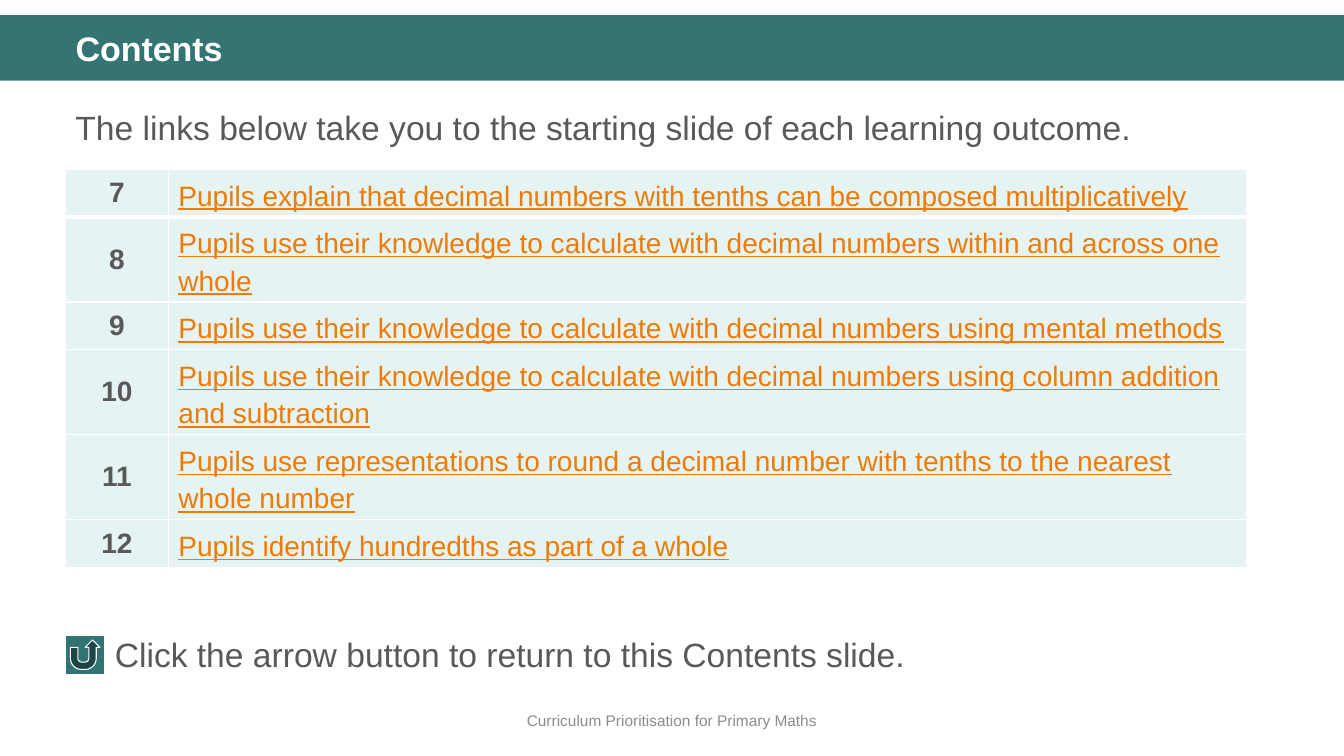
from dataclasses import dataclass

from lxml import etree
from pptx import Presentation
from pptx.dml.color import RGBColor
from pptx.enum.shapes import MSO_SHAPE
from pptx.enum.text import MSO_ANCHOR, MSO_AUTO_SIZE, PP_ALIGN
from pptx.oxml.ns import qn
from pptx.util import Inches, Pt

RECTANGLE = MSO_SHAPE.RECTANGLE
RETURN_BUTTON = MSO_SHAPE.ACTION_BUTTON_RETURN
TOP, MIDDLE = MSO_ANCHOR.TOP, MSO_ANCHOR.MIDDLE
LEFT, CENTER = PP_ALIGN.LEFT, PP_ALIGN.CENTER
NO_AUTOFIT = MSO_AUTO_SIZE.NONE
TITLE_ONLY = 5


@dataclass(frozen=True)
class Theme:
    font: str = "Arial"
    banner: str = "347574"
    button: str = "327473"
    white: str = "FFFFFF"
    body: str = "595959"
    footer: str = "8C8C8C"
    link: str = "EE7B08"
    cell: str = "E5F3F2"
    title_size: float = 24.3
    body_size: float = 24
    table_size: float = 20
    footer_size: float = 11


OUTCOMES = [
    ("7", "Pupils explain that decimal numbers with tenths can be composed multiplicatively", 1),
    ("8", "Pupils use their knowledge to calculate with decimal numbers within and across one whole", 2),
    ("9", "Pupils use their knowledge to calculate with decimal numbers using mental methods", 1),
    ("10", "Pupils use their knowledge to calculate with decimal numbers using column addition and subtraction", 2),
    ("11", "Pupils use representations to round a decimal number with tenths to the nearest whole number", 2),
    ("12", "Pupils identify hundredths as part of a whole", 1),
]
COLUMN_WIDTHS = (1.02, 10.69)
ROW_HEIGHTS = {1: 0.47, 2: 0.84}


class SlideBuilder:
    def __init__(self, slide, theme):
        self.slide = slide
        self.theme = theme

    def add_words(self, frame, text, size, color, bold=False, underline=False, **paragraph_format):
        paragraph = frame.paragraphs[0]
        for name, value in paragraph_format.items():
            setattr(paragraph, name, value)
        run = paragraph.add_run()
        run.text = text
        font_format = {
            "name": self.theme.font,
            "size": Pt(size),
            "bold": bold,
            "underline": underline,
        }
        for name, value in font_format.items():
            setattr(run.font, name, value)
        run.font.color.rgb = RGBColor.from_string(color)

    def prepare(self, frame, anchor):
        frame_format = {
            "word_wrap": True,
            "auto_size": NO_AUTOFIT,
            "vertical_anchor": anchor,
        }
        for name, value in frame_format.items():
            setattr(frame, name, value)

    def shape(self, kind, box, fill, line=None):
        shape = self.slide.shapes.add_shape(kind, *map(Inches, box))
        shape.shadow.inherit = False
        shape.fill.solid()
        shape.fill.fore_color.rgb = RGBColor.from_string(fill)
        if line:
            shape.line.color.rgb = RGBColor.from_string(line)
            shape.line.width = Pt(0.75)
        else:
            shape.line.fill.background()

    def text(self, box, text, size, color, anchor=TOP, **paragraph_format):
        frame = self.slide.shapes.add_textbox(*map(Inches, box)).text_frame
        self.prepare(frame, anchor)
        self.add_words(frame, text, size, color, **paragraph_format)

    def title(self, box, text):
        title = self.slide.shapes.title
        for name, value in zip(("left", "top", "width", "height"), box):
            setattr(title, name, Inches(value))
        self.prepare(title.text_frame, MIDDLE)
        self.add_words(title.text_frame, text, self.theme.title_size, self.theme.white,
                       bold=True, alignment=LEFT, line_spacing=0.9)
        self.slide.shapes._spTree.append(title._element)

    def borders(self, cell, widths):
        properties = cell._tc.get_or_add_tcPr()
        for index, (side, width) in enumerate(widths.items()):
            line = etree.Element(qn(f"a:ln{side}"), w=str(Pt(width)))
            fill = etree.SubElement(line, qn("a:solidFill"))
            etree.SubElement(fill, qn("a:srgbClr"), val=self.theme.white)
            properties.insert(index, line)

    def outcome_table(self, left, top, outcomes):
        heights = [ROW_HEIGHTS[lines] for *_, lines in outcomes]
        box = (left, top, sum(COLUMN_WIDTHS), sum(heights))
        table = self.slide.shapes.add_table(
            len(outcomes), len(COLUMN_WIDTHS), *map(Inches, box)).table
        for name in ("first_row", "horz_banding"):
            setattr(table, name, False)
        for column, width in zip(table.columns, COLUMN_WIDTHS):
            column.width = Inches(width)
        for row, height in zip(table.rows, heights):
            row.height = Inches(height)
        formats = (
            {"color": self.theme.body, "bold": True, "alignment": CENTER},
            {"color": self.theme.link, "underline": True, "line_spacing": 1.2},
        )
        for row_index, (number, outcome, _) in enumerate(outcomes):
            widths = {"L": 1, "R": 1, "T": 3 if row_index == 1 else 1,
                      "B": 3 if row_index == 0 else 1}
            for column_index, text in enumerate((number, outcome)):
                cell = table.cell(row_index, column_index)
                cell.vertical_anchor = MIDDLE
                cell.fill.solid()
                cell.fill.fore_color.rgb = RGBColor.from_string(self.theme.cell)
                self.borders(cell, widths)
                self.add_words(cell.text_frame, text, self.theme.table_size,
                               **formats[column_index])


def main():
    presentation = Presentation()
    presentation.slide_width = Inches(13.33)
    presentation.slide_height = Inches(7.5)
    slide = presentation.slides.add_slide(presentation.slide_layouts[TITLE_ONLY])
    theme = Theme()
    builder = SlideBuilder(slide, theme)

    builder.shape(RECTANGLE, (0, 0.15, 13.33, 0.65), theme.banner)
    builder.text((0, 6.95, 13.33, 0.4), "Curriculum Prioritisation for Primary Maths",
                 theme.footer_size, theme.footer, MIDDLE, alignment=CENTER)
    builder.text((0.65, 0.93, 12.18, 3.51),
                 "The links below take you to the starting slide of each learning outcome.",
                 theme.body_size, theme.body, line_spacing=1.2, space_before=Pt(10))
    builder.outcome_table(0.65, 1.68, OUTCOMES)
    builder.shape(RETURN_BUTTON, (0.65, 6.3, 0.39, 0.39), theme.button, theme.white)
    builder.text((1.04, 6.24, 11.32, 0.5),
                 "Click the arrow button to return to this Contents slide.",
                 theme.body_size, theme.body)
    builder.title((0.65, 0.27, 12.18, 0.47), "Contents")

    presentation.save("out.pptx")


if __name__ == "__main__":
    main()
